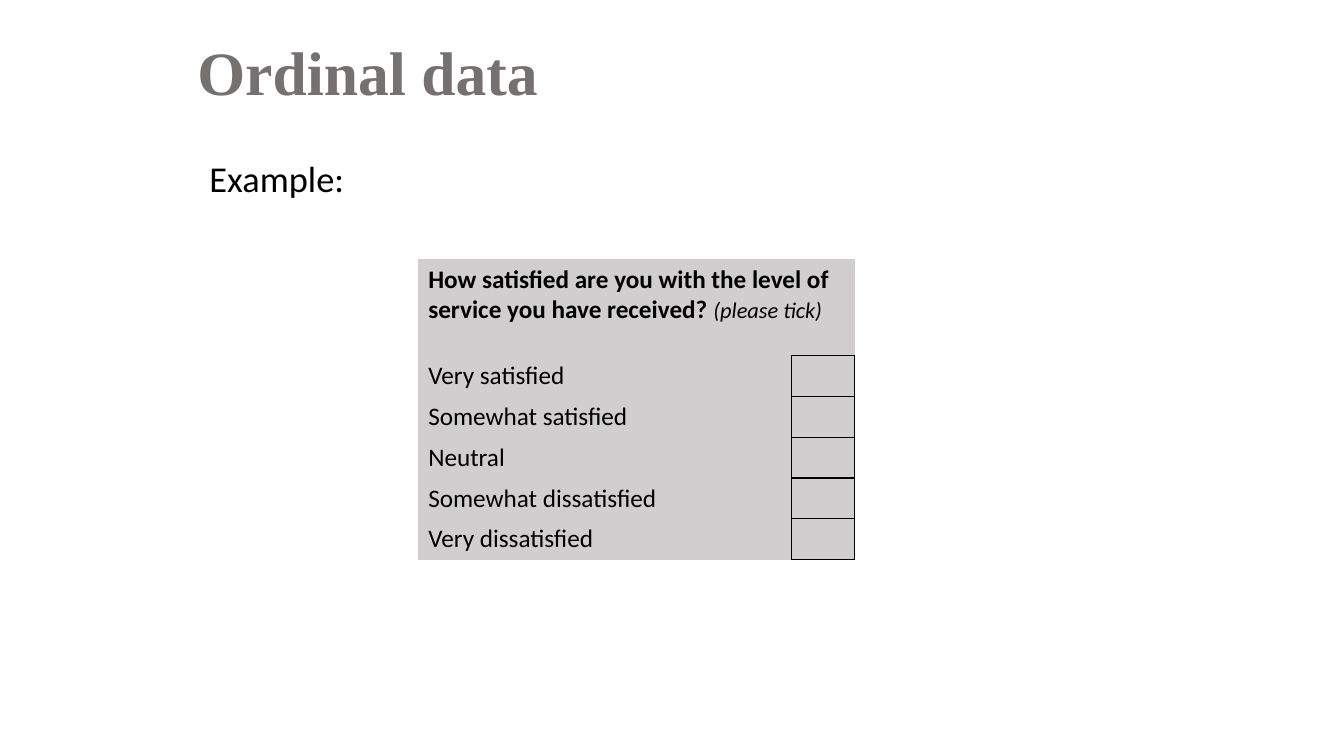
from dataclasses import dataclass

from lxml import etree
from pptx import Presentation
from pptx.dml.color import RGBColor
from pptx.enum.text import MSO_ANCHOR, MSO_AUTO_SIZE, PP_ALIGN
from pptx.oxml.ns import qn
from pptx.util import Cm, Pt

MIDDLE = MSO_ANCHOR.MIDDLE
NO_AUTOFIT = MSO_AUTO_SIZE.NONE
LEFT = PP_ALIGN.LEFT
TITLE_ONLY = 5
SIDES = "LRTB"


@dataclass(frozen=True)
class Theme:
    heading_font: str = "Times New Roman"
    body_font: str = "Calibri"
    heading: RGBColor = RGBColor(0x76, 0x71, 0x71)
    ink: RGBColor = RGBColor(0, 0, 0)
    panel: RGBColor = RGBColor(0xD0, 0xCE, 0xCE)
    heading_size: Pt = Pt(44)
    lead_size: Pt = Pt(26)
    answer_size: Pt = Pt(18)
    hint_size: Pt = Pt(16)
    spacer_size: Pt = Pt(8)
    rule: Pt = Pt(1)


THEME = Theme()
ANSWERS = [
    "Very satisfied",
    "Somewhat satisfied",
    "Neutral",
    "Somewhat dissatisfied",
    "Very dissatisfied",
]


def add_run(paragraph, text, size, color=THEME.ink, font=THEME.body_font,
            bold=False, italic=False):
    run = paragraph.add_run()
    run.text = text
    run.font.name = font
    run.font.size = size
    run.font.bold = bold
    run.font.italic = italic
    run.font.color.rgb = color


def set_title(slide, text):
    title = slide.shapes.title
    title.left, title.top = Cm(4.72), Cm(0.33)
    title.width, title.height = Cm(16.69), Cm(2.92)
    frame = title.text_frame
    frame.auto_size = NO_AUTOFIT
    frame.vertical_anchor = MIDDLE
    paragraph = frame.paragraphs[0]
    paragraph.alignment = LEFT
    add_run(paragraph, text, THEME.heading_size, THEME.heading,
            THEME.heading_font, bold=True)


def add_lead(slide, text):
    lead = slide.shapes.add_textbox(Cm(5.03), Cm(3.94), Cm(24), Cm(6.63))
    frame = lead.text_frame
    frame.word_wrap = True
    frame.auto_size = NO_AUTOFIT
    paragraph = frame.paragraphs[0]
    paragraph.line_spacing = 0.9
    paragraph.space_before = Pt(6)
    paragraph.space_after = Pt(12)
    add_run(paragraph, text, THEME.lead_size)


def style_cell(cell, ruled=""):
    cell.fill.solid()
    cell.fill.fore_color.rgb = THEME.panel
    properties = cell._tc.get_or_add_tcPr()
    for position, side in enumerate(SIDES):
        line = etree.Element(qn(f"a:ln{side}"), w=str(THEME.rule))
        if side in ruled:
            fill = etree.SubElement(line, qn("a:solidFill"))
            etree.SubElement(fill, qn("a:srgbClr"), val=str(THEME.ink))
        else:
            etree.SubElement(line, qn("a:noFill"))
        properties.insert(position, line)


def shrink_empty_cell(cell):
    cell.margin_top = cell.margin_bottom = 0
    paragraph = cell.text_frame.paragraphs[0]._p
    etree.SubElement(paragraph, qn("a:endParaRPr"),
                     sz=str(int(THEME.spacer_size.pt * 100)))


def add_survey(slide, question, hint, answers):
    column_widths = [Cm(9.4), Cm(1.6)]
    row_heights = [Cm(1.78), Cm(0.62)] + [Cm(1.03)] * len(answers)
    survey = slide.shapes.add_table(
        len(row_heights), len(column_widths), Cm(10.54), Cm(6.53),
        sum(column_widths), sum(row_heights)).table
    survey.first_row = False
    survey.horz_banding = False
    for column, width in zip(survey.columns, column_widths):
        column.width = width
    for row, height in zip(survey.rows, row_heights):
        row.height = height

    heading = survey.cell(0, 0)
    heading.merge(survey.cell(0, 1))
    style_cell(heading)
    paragraph = heading.text_frame.paragraphs[0]
    add_run(paragraph, question, THEME.answer_size, bold=True)
    add_run(paragraph, hint, THEME.hint_size, italic=True)

    for column, ruled in enumerate(["", "B"]):
        spacer = survey.cell(1, column)
        style_cell(spacer, ruled)
        shrink_empty_cell(spacer)

    for row, answer in enumerate(answers, start=2):
        label = survey.cell(row, 0)
        style_cell(label, "R")
        add_run(label.text_frame.paragraphs[0], answer, THEME.answer_size)
        style_cell(survey.cell(row, 1), SIDES)


def main():
    presentation = Presentation()
    presentation.slide_width = Cm(33.87)
    presentation.slide_height = Cm(19.05)
    slide = presentation.slides.add_slide(
        presentation.slide_layouts[TITLE_ONLY])
    set_title(slide, "Ordinal data")
    add_lead(slide, "Example:")
    add_survey(
        slide,
        "How satisfied are you with the level of service you have received? ",
        "(please tick)", ANSWERS)
    presentation.save("out.pptx")


if __name__ == "__main__":
    main()
